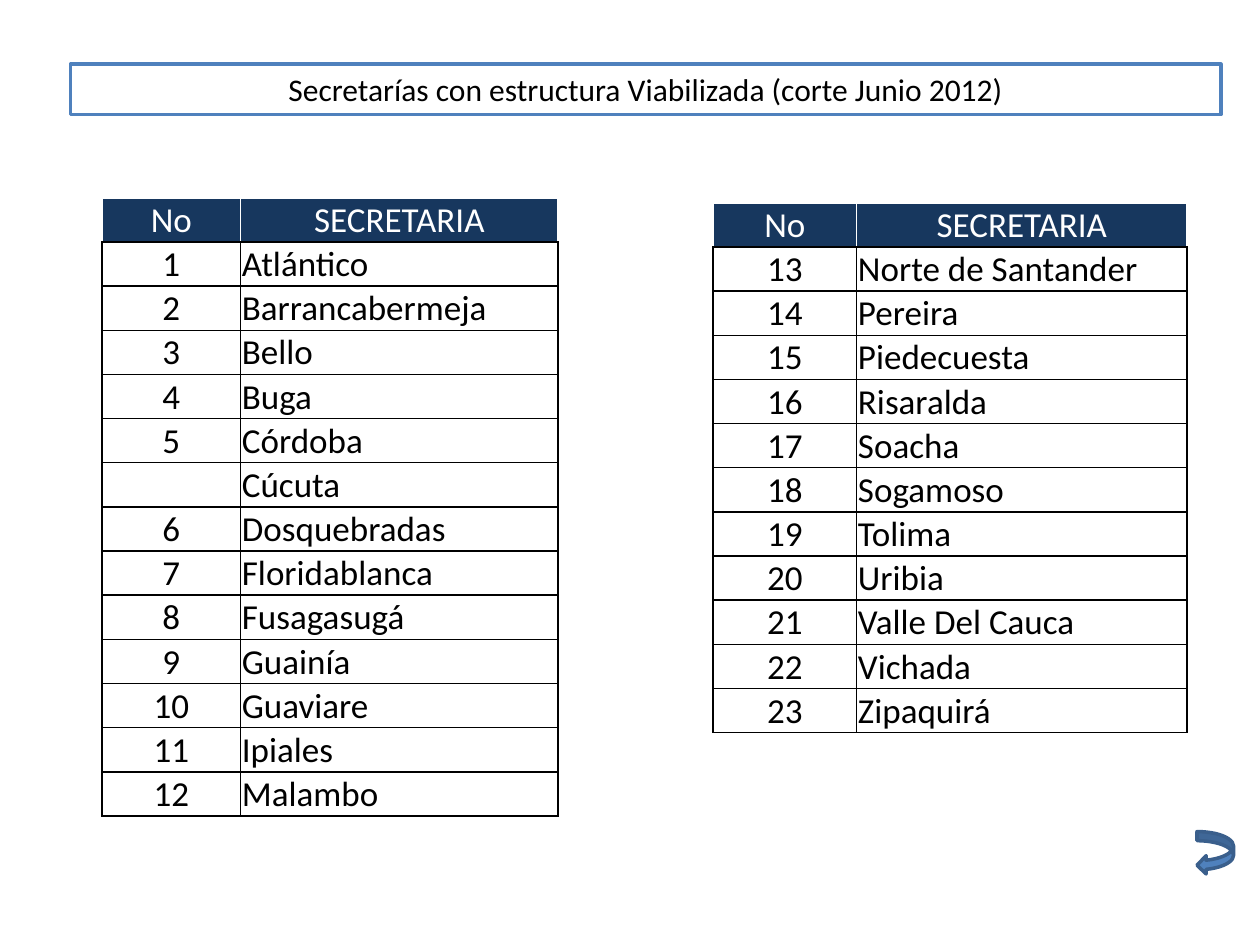
from dataclasses import dataclass

from lxml.etree import SubElement
from pptx import Presentation
from pptx.dml.color import RGBColor
from pptx.enum.shapes import MSO_SHAPE
from pptx.enum.text import MSO_ANCHOR, PP_ALIGN
from pptx.oxml.ns import qn
from pptx.util import Inches, Pt

WHITE = RGBColor(0xFF, 0xFF, 0xFF)
BLACK = RGBColor(0x00, 0x00, 0x00)
NAVY = RGBColor(0x17, 0x37, 0x5E)
BLUE = RGBColor(0x4F, 0x81, 0xBD)
DARK_BLUE = RGBColor(0x3A, 0x5F, 0x8C)
FONT = "Calibri"
ROW_HEIGHT = 0.34
UNNUMBERED = "Cúcuta"


@dataclass(frozen=True)
class SecretariatTable:
    left: float
    top: float
    column_widths: tuple[float, float]
    header_height: float
    first_number: int
    names: tuple[str, ...]

    def rows(self) -> list[tuple[str, str]]:
        """Header row, then the names numbered in order."""
        rows = [("No", "SECRETARIA")]
        number = self.first_number
        for name in self.names:
            if name == UNNUMBERED:
                rows.append(("", name))
            else:
                rows.append((str(number), name))
                number += 1
        return rows


TABLES = (
    SecretariatTable(0.81, 1.57, (1.1, 2.52), 0.35, 1, (
        "Atlántico", "Barrancabermeja", "Bello", "Buga", "Córdoba", UNNUMBERED,
        "Dosquebradas", "Floridablanca", "Fusagasugá", "Guainía", "Guaviare",
        "Ipiales", "Malambo")),
    SecretariatTable(5.66, 1.61, (1.14, 2.62), ROW_HEIGHT, 13, (
        "Norte de Santander", "Pereira", "Piedecuesta", "Risaralda", "Soacha",
        "Sogamoso", "Tolima", "Uribia", "Valle Del Cauca", "Vichada",
        "Zipaquirá")),
)


def format_text(text_frame, size: int, color: RGBColor, alignment) -> None:
    for paragraph in text_frame.paragraphs:
        paragraph.alignment = alignment
        for run in paragraph.runs:
            run.font.name = FONT
            run.font.size = Pt(size)
            run.font.color.rgb = color


def add_borders(cell, side_color: RGBColor) -> None:
    """Draw 1 pt borders; the bottom one is always black."""
    properties = cell._tc.get_or_add_tcPr()
    for side in "LRTB":
        color = BLACK if side == "B" else side_color
        line = SubElement(properties, qn(f"a:ln{side}"), w=str(Pt(1)))
        fill = SubElement(line, qn("a:solidFill"))
        SubElement(fill, qn("a:srgbClr"), val=str(color))


def format_cell(cell, is_header: bool, is_centered: bool) -> None:
    cell.vertical_anchor = MSO_ANCHOR.MIDDLE
    cell.margin_left = cell.margin_right = cell.margin_top = Inches(0.01)
    cell.margin_bottom = 0
    add_borders(cell, WHITE if is_header else BLACK)
    if is_header:
        cell.fill.solid()
        cell.fill.fore_color.rgb = NAVY
    else:
        cell.fill.background()
    format_text(cell.text_frame, 20, WHITE if is_header else BLACK,
                PP_ALIGN.CENTER if is_centered else PP_ALIGN.LEFT)


def add_secretariat_table(slide, content: SecretariatTable) -> None:
    rows = content.rows()
    height = content.header_height + ROW_HEIGHT * len(content.names)
    table = slide.shapes.add_table(
        len(rows), 2, Inches(content.left), Inches(content.top),
        Inches(sum(content.column_widths)), Inches(height)).table
    table.horz_banding = False
    table.first_row = False
    for column, width in zip(table.columns, content.column_widths):
        column.width = Inches(width)
    for row_index, texts in enumerate(rows):
        is_header = row_index == 0
        table.rows[row_index].height = Inches(
            content.header_height if is_header else ROW_HEIGHT)
        for column_index, text in enumerate(texts):
            cell = table.cell(row_index, column_index)
            cell.text_frame.text = text
            format_cell(cell, is_header, is_header or column_index == 0)


def add_outlined_shape(slide, kind, left: float, top: float, width: float,
                       height: float, fill: RGBColor, line: RGBColor):
    shape = slide.shapes.add_shape(
        kind, Inches(left), Inches(top), Inches(width), Inches(height))
    shape.shadow.inherit = False
    shape.fill.solid()
    shape.fill.fore_color.rgb = fill
    shape.line.color.rgb = line
    shape.line.width = Pt(2)
    return shape


def main() -> None:
    presentation = Presentation()
    presentation.slide_width = Inches(10)
    presentation.slide_height = Inches(7.5)
    slide = presentation.slides.add_slide(presentation.slide_layouts[6])

    title = add_outlined_shape(slide, MSO_SHAPE.RECTANGLE,
                               0.56, 0.51, 9.13, 0.4, WHITE, BLUE)
    title.text_frame.word_wrap = True
    title.text_frame.text = "Secretarías con estructura Viabilizada (corte Junio 2012)"
    format_text(title.text_frame, 18, BLACK, PP_ALIGN.CENTER)

    for content in TABLES:
        add_secretariat_table(slide, content)

    add_outlined_shape(slide, MSO_SHAPE.CURVED_LEFT_ARROW,
                       9.5, 6.6, 0.29, 0.34, BLUE, DARK_BLUE)
    presentation.save("out.pptx")


if __name__ == "__main__":
    main()
